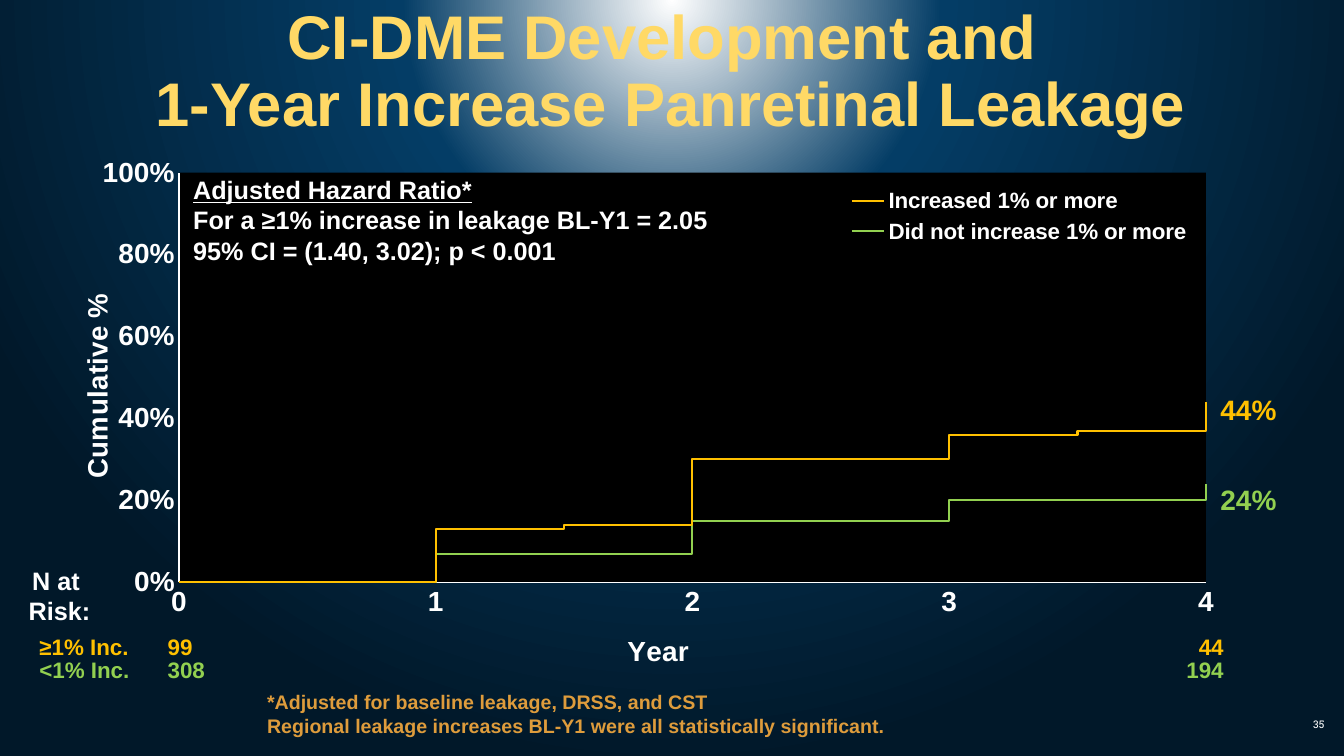
from pptx import Presentation, util as u
from pptx.chart import data
from pptx.dml import color
from pptx.enum import chart as ch, text
from pptx.oxml import parse_xml
from pptx.oxml.ns import nsdecls, qn

WHITE, AMBER, GREEN = "FFFFFF", "FFC000", "92D050"
LEFT, CENTER, RIGHT = text.PP_ALIGN.LEFT, text.PP_ALIGN.CENTER, text.PP_ALIGN.RIGHT
NO_STYLE = "{2D5ABB26-0587-4C30-8999-92F81FD0307C}"


def rgb(value):
    return color.RGBColor.from_string(value)


def cm(values):
    return [u.Cm(value) for value in values]


def set_font(font, tint, size, **extra):
    values = dict(name="Arial", size=u.Pt(size), bold=True) | extra
    for name, value in values.items():
        setattr(font, name, value)
    font.color.rgb = rgb(tint)


def write(frame, lines, size, align=LEFT, spacing=1.0, **extra):
    for index, (words, tint) in enumerate(lines):
        para = frame.add_paragraph() if index else frame.paragraphs[0]
        para.alignment, para.line_spacing = align, spacing
        para.text = words
        for span in para.runs:
            set_font(span.font, tint, size, **extra)


def add_text(page, box, lines, size, align=LEFT, anchor="TOP", wrap=True, **extra):
    frame = page.shapes.add_textbox(*cm(box)).text_frame
    frame.word_wrap = wrap
    frame.vertical_anchor = text.MSO_ANCHOR[anchor]
    write(frame, lines, size, align, **extra)
    return frame


def paint_background(page):
    fill = page.background.fill
    fill.gradient()
    stops = "".join(
        f'<a:gs pos="{place * 1000}"><a:srgbClr val="{tint}"/></a:gs>'
        for place, tint in ((0, WHITE), (35, "043D66"), (100, "011829")))
    gradient = page.background._cSld.find(".//" + qn("a:gradFill"))
    gradient.getparent().replace(gradient, parse_xml(
        f'<a:gradFill {nsdecls("a")} rotWithShape="1"><a:gsLst>{stops}</a:gsLst>'
        '<a:path path="circle"><a:fillToRect l="50000" t="-80000" r="50000" b="180000"/>'
        '</a:path></a:gradFill>'))


def place(element, **layout):
    for old in element.findall(qn("c:layout")):
        element.remove(old)
    target = '<c:layoutTarget val="inner"/>' if element.tag == qn("c:plotArea") else ""
    modes = "".join(f'<c:{name}Mode val="edge"/>' for name in "xy")
    sizes = "".join(f'<c:{name} val="{value}"/>' for name, value in layout.items())
    node = parse_xml(f'<c:layout {nsdecls("c")}><c:manualLayout>{target}{modes}{sizes}'
                     '</c:manualLayout></c:layout>')
    overlay = element.find(qn("c:overlay"))
    if overlay is None:
        element.insert(0, node)
    else:
        overlay.addprevious(node)


def step_points(steps):
    level, points = 0, [(0, 0)]
    for year, value in steps.items():
        points += [(year, level), (year, value)]
        level = value
    return points


def style_axis(axis, title, top, unit, number_format, x, y):
    values = dict(minimum_scale=0, maximum_scale=top, major_unit=unit,
                  has_major_gridlines=False, major_tick_mark=ch.XL_TICK_MARK.NONE,
                  minor_tick_mark=ch.XL_TICK_MARK.NONE)
    for name, value in values.items():
        setattr(axis, name, value)
    axis.tick_labels.number_format = number_format
    axis.tick_labels.number_format_is_linked = False
    set_font(axis.tick_labels.font, WHITE, 20)
    axis.format.line.color.rgb = rgb(WHITE)
    axis.format.line.width = u.Pt(0.75)
    write(axis.axis_title.text_frame, [(title, WHITE)], 20, CENTER)
    place(axis.axis_title._element, x=x, y=y)


def add_curves(page, box):
    curves = (
        ("Increased 1% or more", AMBER,
         {1: 0.13, 1.5: 0.14, 2: 0.3, 3: 0.36, 3.5: 0.37, 4: 0.44}),
        ("Did not increase 1% or more", GREEN,
         {1: 0.07, 1.5: 0.07, 2: 0.15, 3: 0.2, 4: 0.24}))
    source = data.XyChartData()
    for name, tint, steps in curves:
        series = source.add_series(name)
        for year, value in step_points(steps):
            series.add_data_point(year, value)
    chart = page.shapes.add_chart(
        ch.XL_CHART_TYPE.XY_SCATTER_LINES_NO_MARKERS, *cm(box), source).chart
    chart.has_title = False
    set_font(chart.font, WHITE, 20)
    for series, (name, tint, steps) in zip(chart.plots[0].series, curves):
        series.smooth = False
        series.marker.style = ch.XL_MARKER_STYLE.NONE
        series.format.line.color.rgb = rgb(tint)
        series.format.line.width = u.Pt(1.5)

    style_axis(chart.category_axis, "Year", 4, 1, "0", 0.48, 0.92)
    style_axis(chart.value_axis, "Cumulative %", 1, 0.2, "0%", 0.01, 0.26)
    body = chart.value_axis.axis_title._element.find(".//" + qn("a:bodyPr"))
    body.set("rot", "-5400000")
    body.set("vert", "horz")

    chart.has_legend = True
    chart.legend.position = ch.XL_LEGEND_POSITION.TOP
    chart.legend.include_in_layout = True
    set_font(chart.legend.font, WHITE, 16)
    place(chart.legend._element, x=0.66, y=0.05, w=0.32, h=0.13)
    plot_area = chart._chartSpace.chart.plotArea
    place(plot_area, x=0.1, y=0.03, w=0.88, h=0.8)
    plot_area.append(parse_xml(
        f'<c:spPr {nsdecls("c", "a")}><a:solidFill><a:srgbClr val="000000"/>'
        '</a:solidFill></c:spPr>'))


def add_plain_table(page, left, top, widths, heights):
    box = cm((left, top, sum(widths), sum(heights)))
    table = page.shapes.add_table(len(heights), len(widths), *box).table
    table.first_row = table.horz_banding = False
    table._tbl.tblPr.find(qn("a:tableStyleId")).text = NO_STYLE
    for column, width in zip(table.columns, widths):
        column.width = u.Cm(width)
    for row, height in zip(table.rows, heights):
        row.height = u.Cm(height)
    for cell in table.iter_cells():
        cell.fill.background()
    return table


def add_risk_table(page, left, top):
    table = add_plain_table(page, left, top, (3.23, 5.33, 6.07, 2.79, 6.02, 6.91), (1.6,))
    entries = ((0, "≥1% Inc.", "<1% Inc.", LEFT), (1, "99", "308", LEFT),
               (5, "44", "194", RIGHT))
    for column, increased, stable, align in entries:
        write(table.cell(0, column).text_frame,
              [(increased, AMBER), (stable, GREEN)], 16, align, 0.93)


def add_end_labels(page, left, top):
    table = add_plain_table(page, left, top, (2.11,), (2.26, 1.6))
    for row, label in enumerate((("44%", AMBER), ("24%", GREEN))):
        write(table.cell(row, 0).text_frame, [label], 20)


def add_notes(page):
    add_text(page, (0.46, 14.12, 2.08, 1.8), [("N at ", WHITE), ("Risk:", WHITE)],
             18, CENTER, wrap=False)
    hazard = add_text(page, (4.62, 4.27, 18.24, 3.33), [
        ("Adjusted Hazard Ratio*", WHITE),
        ("For a ≥1% increase in leakage BL-Y1 = 2.05", WHITE),
        ("95% CI = (1.40, 3.02); p < 0.001", WHITE)], 18)
    hazard.paragraphs[0].runs[0].font.underline = True
    add_text(page, (6.48, 17.27, 22.4, 1.45), [
        ("*Adjusted for baseline leakage, DRSS, and CST", "DE9C3C"),
        ("Regional leakage increases BL-Y1 were all statistically significant.", "DE9C3C")], 14)


def main():
    deck = Presentation()
    deck.slide_width, deck.slide_height = cm((33.87, 19.05))
    page = deck.slides.add_slide(deck.slide_layouts[6])
    paint_background(page)
    add_text(page, (2.54, 0, 28.75, 3.68),
             [("CI-DME Development and \v1-Year Increase Panretinal Leakage", "FFD966")],
             44, CENTER, "MIDDLE", spacing=0.9)
    add_text(page, (31.55, 17.73, 2.08, 1.02), [("35", WHITE)], 7.5, RIGHT, "MIDDLE",
             name="Roboto Slab", bold=False)
    add_curves(page, (1.57, 3.96, 29.41, 13.08))
    add_risk_table(page, 0.74, 15.93)
    add_end_labels(page, 30.5, 9.83)
    add_notes(page)
    deck.save("out.pptx")


if __name__ == "__main__":
    main()
